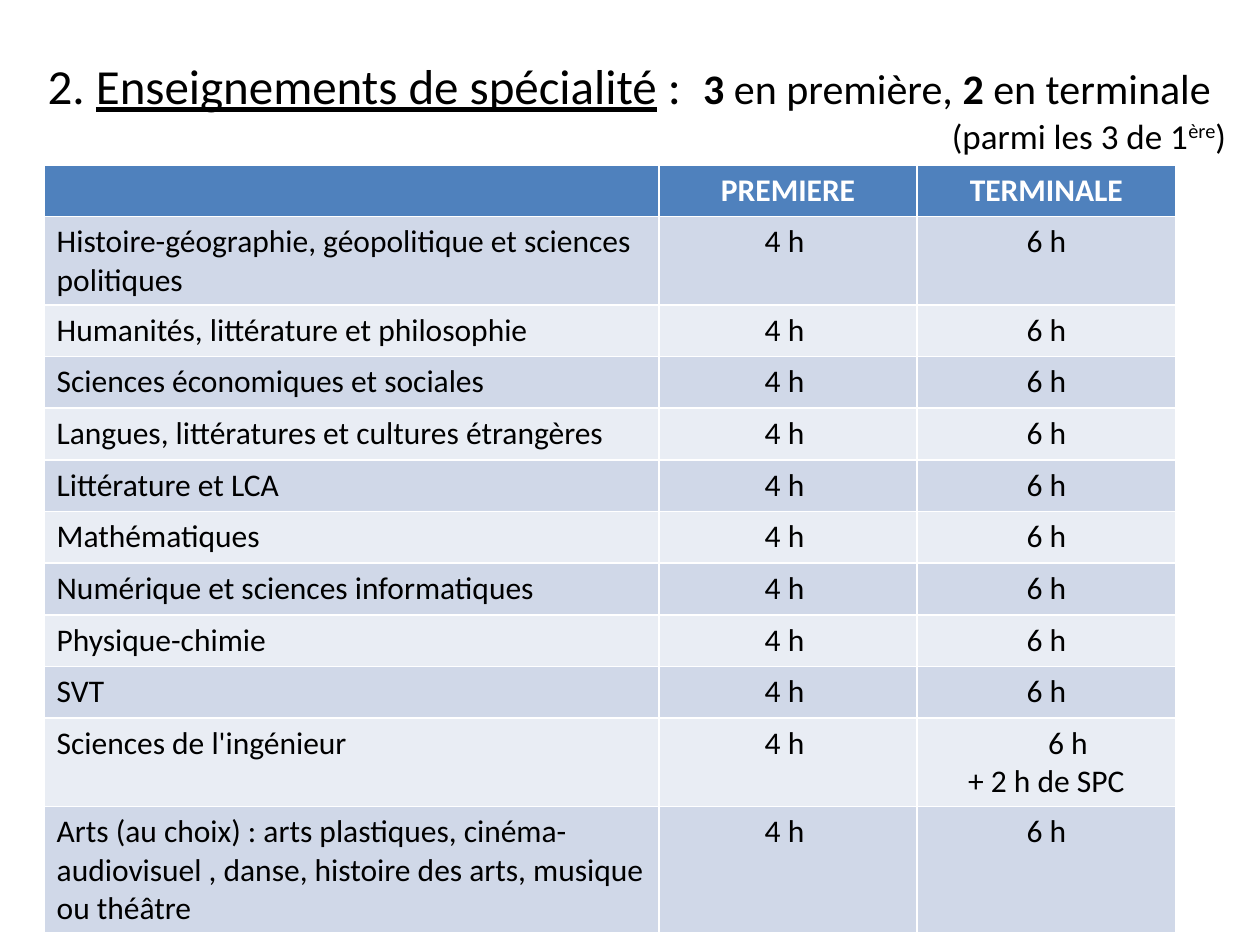
from pptx import Presentation
from pptx.util import Inches, Pt
from pptx.dml.color import RGBColor as RGB
from pptx.enum.text import PP_ALIGN as AL, MSO_AUTO_SIZE as AUTO

COLORS = {"header": "4F81BD", "odd": "D0D8E8", "even": "E9EDF4",
          "text": "000000", "light": "FFFFFF"}
SUBJECTS = [
    "Histoire-géographie, géopolitique et sciences politiques",
    "Humanités, littérature et philosophie",
    "Sciences économiques et sociales",
    "Langues, littératures et cultures étrangères",
    "Littérature et LCA",
    "Mathématiques",
    "Numérique et sciences informatiques",
    "Physique-chimie",
    "SVT",
    "Sciences de l'ingénieur",
    "Arts (au choix) : arts plastiques, cinéma-audiovisuel , danse, "
    "histoire des arts, musique ou théâtre",
]
ENGINEERING = "Sciences de l'ingénieur"
TALL_ROWS = {1: 0.7, 10: 0.7, 11: 0.99}


class Deck:
    font = "Calibri"

    def __init__(self, width, height):
        self.prs = Presentation()
        self.prs.slide_width, self.prs.slide_height = Inches(width), Inches(height)
        self.s = self.prs.slides.add_slide(self.prs.slide_layouts[6])

    def style(self, r, size, color="text", bold=False):
        r.font.name, r.font.size, r.font.bold = self.font, Pt(size), bold
        r.font.color.rgb = RGB.from_string(COLORS[color])

    def title(self, box, lines, right_inset):
        tf = self.s.shapes.add_textbox(*map(Inches, box)).text_frame
        tf.word_wrap = True
        tf.auto_size = AUTO.SHAPE_TO_FIT_TEXT
        tf.margin_right = Inches(right_inset)
        for i, (align, runs) in enumerate(lines):
            p = tf.add_paragraph() if i else tf.paragraphs[0]
            p.alignment = align
            for text, size, kind in runs:
                r = p.add_run()
                r.text = text
                self.style(r, size, bold=kind == "bold")
                r.font.underline = kind == "underline"
                if kind == "super":
                    r.font._element.set("baseline", "30000")

    def cell(self, cell, text, fill, align, color="text", bold=False):
        cell.fill.solid()
        cell.fill.fore_color.rgb = RGB.from_string(COLORS[fill])
        cell.text_frame.text = text
        for p in cell.text_frame.paragraphs:
            p.alignment = align
            for r in p.runs:
                self.style(r, 18, color, bold)

    def table(self, left, top, widths, heights, rows):
        t = self.s.shapes.add_table(
            len(rows), len(widths), Inches(left), Inches(top),
            Inches(sum(widths)), Inches(sum(heights))).table
        for col, width in zip(t.columns, widths):
            col.width = Inches(width)
        for i, (row, height) in enumerate(zip(rows, heights)):
            t.rows[i].height = Inches(height)
            fill = "odd" if i % 2 else "even"
            for j, text in enumerate(row):
                align = AL.CENTER if j else AL.LEFT
                if i:
                    self.cell(t.cell(i, j), text, fill, align)
                else:
                    self.cell(t.cell(i, j), text, "header", align, "light", True)
        return t

    def indent(self, p, inches):
        p._p.get_or_add_pPr().set("marL", str(Inches(inches)))


def main():
    deck = Deck(10, 7.5)
    deck.title((0.28, 0.39, 9.72, 0.98), [
        (AL.LEFT, [("2. ", 28, ""), ("Enseignements de spécialité", 28, "underline"),
                   (" :  ", 28, ""), ("3", 24, "bold"), (" en première, ", 24, ""),
                   ("2", 24, "bold"), (" en terminale", 24, "")]),
        (AL.RIGHT, [("(parmi les 3 de 1", 20, ""), ("ère", 20, "super"),
                    (")", 20, "")]),
    ], right_inset=0.27)
    rows = [("", "PREMIERE", "TERMINALE")]
    for subject in SUBJECTS:
        final = "6 h \n+ 2 h de SPC" if subject == ENGINEERING else "6 h"
        rows.append((subject, "4 h ", final))
    heights = [TALL_ROWS.get(i, 0.41) for i in range(len(rows))]
    t = deck.table(0.35, 1.31, (4.88, 2.05, 2.05), heights, rows)
    engineering_row = SUBJECTS.index(ENGINEERING) + 1
    deck.indent(t.cell(engineering_row, 2).text_frame.paragraphs[0], 0.4)
    deck.prs.save("out.pptx")


if __name__ == "__main__":
    main()
